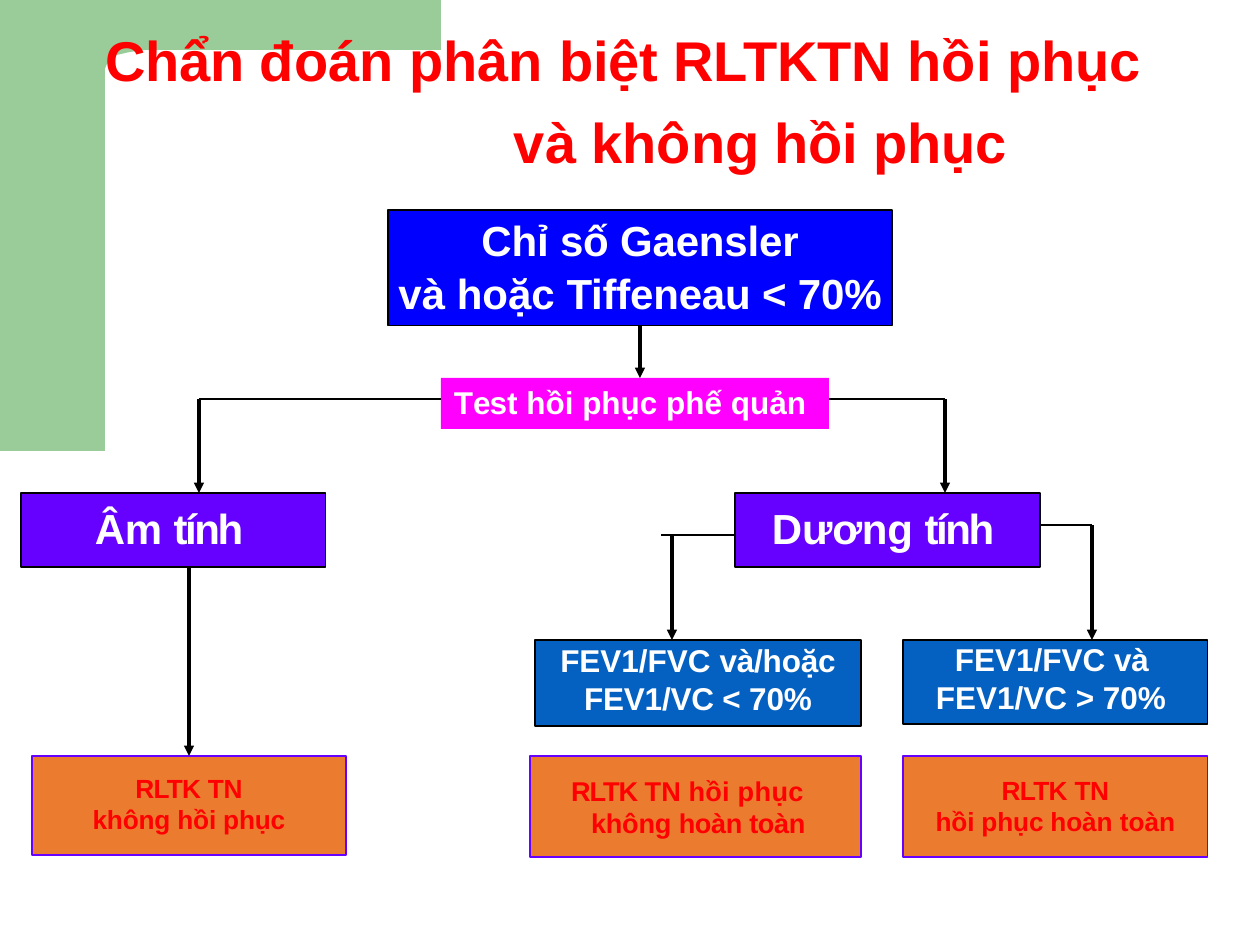
from dataclasses import dataclass

from pptx import Presentation
from pptx.dml.color import RGBColor
from pptx.enum.shapes import MSO_CONNECTOR as Connector, MSO_SHAPE as Preset
from pptx.enum.text import MSO_ANCHOR as Anchor, MSO_AUTO_SIZE as AutoSize, PP_ALIGN as Align
from pptx.oxml.ns import qn
from pptx.util import Emu, Pt
from lxml.etree import SubElement

EMU_PER_PX = 914400 / 126
BLACK, WHITE, RED = "000000", "FFFFFF", "FF0000"
VIOLET, STEEL, ORANGE = "6600FF", "0461C1", "EB7B2F"


@dataclass(frozen=True)
class Line:
    """A paragraph: (text, letter spacing) pieces, space before in pt, indent in px."""
    pieces: tuple
    before: float = 0
    indent: int | None = None


@dataclass(frozen=True)
class Box:
    """A flow chart step, in px."""
    left: int
    top: int
    width: int
    height: int
    fill: str
    border: str | None
    size: float
    color: str
    inset: int
    lines: tuple


@dataclass(frozen=True)
class Link:
    """A straight line in px, with optional joined (step, side) ends."""
    start: tuple
    end: tuple
    arrow: bool = False
    start_joint: tuple | None = None
    end_joint: tuple | None = None


TITLE = (Line((("Chẩn ", -0.1), ("đoán phân ", 0), ("biệt RLTKTN ", -0.1), ("hồi phục", 0)), 1, 1),)
SUBTITLE = (Line((("và ", 0), ("không ", -0.1), ("hồi phục", -0.1)), 1.1, 1),)

STEPS = {
    "ratio": Box(388, 210, 504, 116, "0000FF", BLACK, 24, WHITE, 5, (
        Line((("Chỉ số Gaensler", -0.1),), 3),
        Line((("và hoặc ", 0), ("Tiffeneau < 70%", -0.1)), 1))),
    "positive": Box(735, 493, 305, 74, VIOLET, BLACK, 24, WHITE, 10, (
        Line((("Dương ", -0.1), ("tính", -1.4)), 5.7, 37),)),
    "test": Box(441, 378, 388, 51, "FF00FF", None, 18, WHITE, 5, (
        Line((("T", -1.8), ("es", -0.6), ("t hồi phục phế quản", 0)), 2.7, 13),)),
    "below": Box(535, 640, 326, 86, STEEL, BLACK, 18, WHITE, 1, (
        Line((("FEV1/FVC ", 0), ("và/hoặc", -0.1)), 0.8),
        Line((("FEV1/VC < 70%", -0.1),), 0.3))),
    "above": Box(903, 640, 305, 84, STEEL, BLACK, 18, WHITE, 0, (
        Line((("FEV1/FVC ", 0), ("và", -0.2)), 0.1, 52),
        Line((("FEV1/VC > 70%", 0),), 0.2, 33))),
    "partial": Box(530, 756, 331, 101, ORANGE, VIOLET, 15.5, RED, 18, (
        Line((("RLTK ", -0.6), ("TN hồi ", 0.1), ("phục", 0.2)), 10.2, 41),
        Line((("không ", -0.1), ("hoàn toàn", -0.2)), 0, 61))),
    "irreversible": Box(32, 756, 314, 99, ORANGE, VIOLET, 15, RED, 16, (
        Line((("RLTK ", -0.4), ("TN", -0.1)), 9.6),
        Line((("không hồi phục", -0.1),), 0.1))),
    "complete": Box(903, 756, 305, 101, ORANGE, VIOLET, 15, RED, 18, (
        Line((("RLTK", -0.4), (" TN", -0.2)), 10.3),
        Line((("hồi phục hoàn ", -0.1), ("toàn", 0))))),
    "negative": Box(21, 493, 305, 74, VIOLET, BLACK, 24, WHITE, 10, (
        Line((("Âm ", -0.2), ("tính", -1.4)), 5.7, 74),)),
}

LINKS = (
    Link((640, 326), (640, 378), True, start_joint=("ratio", 2)),
    Link((441, 399), (199, 399)),
    Link((199, 399), (199, 493), True),
    Link((829, 399), (945, 399)),
    Link((945, 399), (945, 493), True),
    Link((189, 567), (189, 756), True, end_joint=("irreversible", 0)),
    Link((735, 535), (661, 535)),
    Link((672, 535), (672, 640), True),
    Link((1040, 525), (1092, 525)),
    Link((1092, 525), (1092, 640), True),
)

CORNER = ((0, 0), (441, 0), (441, 50), (146, 50), (130, 52), (117, 55), (112, 59),
          (107, 64), (105, 69), (105, 451), (0, 451))


def px(length: int) -> Emu:
    """Turn px into EMU."""
    return Emu(round(length * EMU_PER_PX))


def paint(color_format, color: str) -> None:
    """Give a fill, line fill or font a solid hex colour."""
    color_format.rgb = RGBColor.from_string(color)


def write_text(shape, lines: tuple, *, size: float, color: str, inset: int = 1) -> None:
    """Write bold Arial lines; lines without an indent are centred."""
    frame = shape.text_frame
    frame.word_wrap = True
    frame.auto_size = AutoSize.NONE
    frame.vertical_anchor = Anchor.TOP
    frame.margin_left = frame.margin_right = frame.margin_bottom = 0
    frame.margin_top = px(inset)
    for index, line in enumerate(lines):
        paragraph = frame.add_paragraph() if index else frame.paragraphs[0]
        paragraph.alignment = Align.CENTER if line.indent is None else Align.LEFT
        paragraph.space_before = Pt(line.before)
        if line.indent is not None:
            paragraph._p.get_or_add_pPr().set("marL", str(px(line.indent)))
        for text, spacing in line.pieces:
            run = paragraph.add_run()
            run.text = text
            run.font.name, run.font.size, run.font.bold = "Arial", Pt(size), True
            paint(run.font.color, color)
            if spacing:
                run._r.get_or_add_rPr().set("spc", str(round(spacing * 100)))


def draw_box(shapes, box: Box):
    """Draw one step and return its shape."""
    step = shapes.add_shape(Preset.RECTANGLE, px(box.left), px(box.top), px(box.width), px(box.height))
    step.shadow.inherit = False
    step.fill.solid()
    paint(step.fill.fore_color, box.fill)
    if box.border:
        paint(step.line.color, box.border)
        step.line.width = Pt(0.72)
    else:
        step.line.fill.background()
    write_text(step, box.lines, size=box.size, color=box.color, inset=box.inset)
    return step


def draw_link(shapes, link: Link, steps: dict) -> None:
    """Draw one line or arrow, joined to its steps."""
    line = shapes.add_connector(Connector.STRAIGHT, *map(px, link.start + link.end))
    if link.start_joint:
        line.begin_connect(steps[link.start_joint[0]], link.start_joint[1])
    if link.end_joint:
        line.end_connect(steps[link.end_joint[0]], link.end_joint[1])
    paint(line.line.color, BLACK)
    line.line.width = Pt(1.75 if link.arrow else 0.72)
    if link.arrow:
        SubElement(line.line._get_or_add_ln(), qn("a:tailEnd"), type="triangle")
    SubElement(line.element.spPr, qn("a:effectLst"))


def draw_corner(shapes) -> None:
    """Draw the green corner band behind everything else."""
    builder = shapes.build_freeform(*CORNER[0], scale=EMU_PER_PX)
    builder.add_line_segments(CORNER[1:], close=True)
    corner = builder.convert_to_shape()
    corner.shadow.inherit = False
    corner.fill.solid()
    paint(corner.fill.fore_color, "99CC99")
    corner.line.fill.background()
    corner.element.getparent().insert(2, corner.element)


def main() -> None:
    """Build the slide and save it."""
    deck = Presentation()
    deck.slide_width, deck.slide_height = px(1260), px(945)
    shapes = deck.slides.add_slide(deck.slide_layouts[5]).shapes
    draw_corner(shapes)
    title = shapes.title
    title.left, title.top, title.width, title.height = map(px, (104, 24, 1045, 71))
    write_text(title, TITLE, size=32, color=RED)
    subtitle = shapes.add_textbox(*map(px, (513, 106, 500, 71)))
    write_text(subtitle, SUBTITLE, size=32, color=RED)
    steps = {key: draw_box(shapes, box) for key, box in STEPS.items()}
    for link in LINKS:
        draw_link(shapes, link, steps)
    deck.save("out.pptx")


if __name__ == "__main__":
    main()
